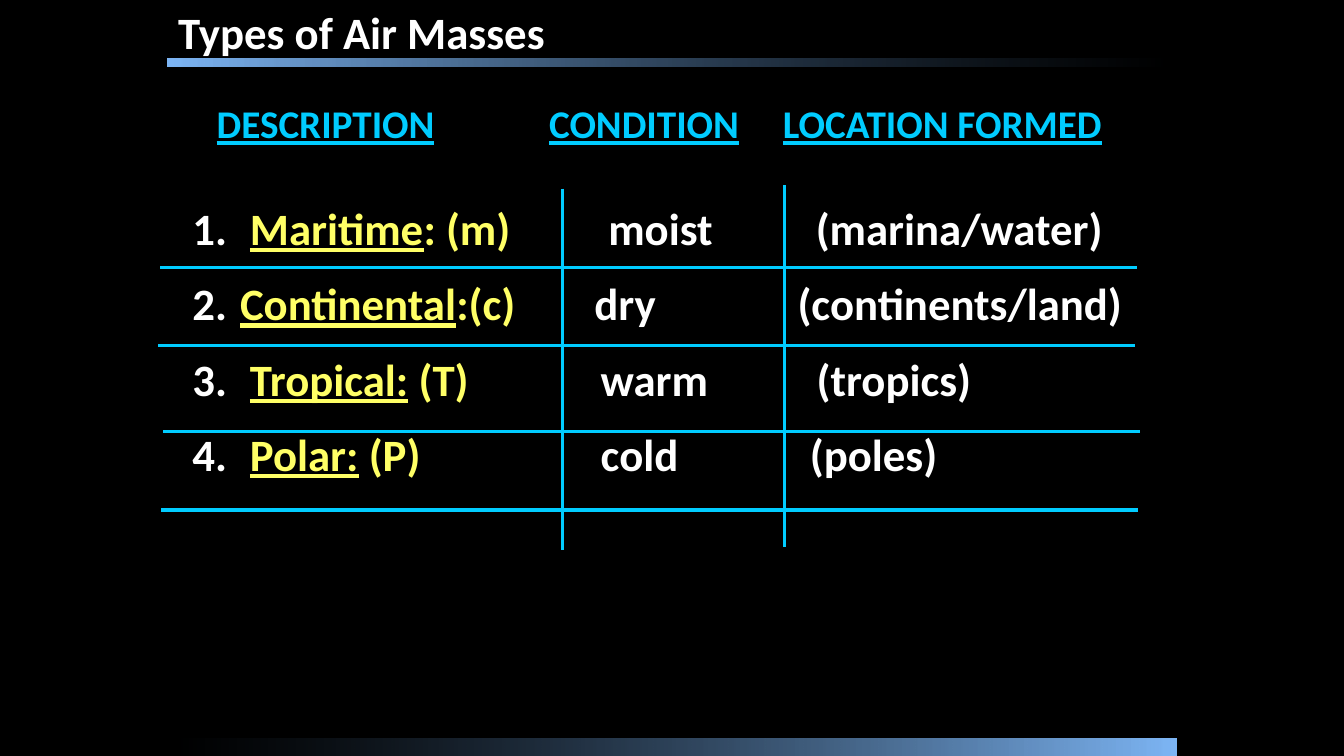
from lxml.etree import SubElement
from pptx import Presentation
from pptx.dml.color import RGBColor
from pptx.enum.shapes import MSO_CONNECTOR, MSO_SHAPE
from pptx.oxml.ns import qn
from pptx.util import Cm, Pt

COLORS = {"background": "000000", "text": "FFFFFF", "name": "FFFF66",
          "accent": "00CCFF", "bar_start": "7EB7F6", "bar_end": "3A5572"}
FONT = "Calibri"
INSET = 0.25

TITLE = "Types of Air Masses"
HEADINGS = ["DESCRIPTION", "CONDITION", "LOCATION FORMED"]
HEADING_TABS = [8.38, 14.27]

# Each cell: indent in cm, then runs of (text, color, underlined)
DESCRIPTIONS = [
    (1.45, [("Maritime", "name", True), (": (m)", "name", False)]),
    (1.2, [("Continental", "name", True), (":(c)", "name", False)]),
    (1.45, [("Tropical:", "name", True), (" (T)", "name", False)]),
    (1.45, [("Polar:", "name", True), (" (P)", "name", False)]),
]
CONDITIONS = [(0.35, "moist"), (0, "dry"), (0.16, "warm"), (0.16, "cold")]
LOCATIONS = [(0.46, "(marina/water)"), (0, "(continents/land)"),
             (0.48, "(tropics)"), (0.31, "(poles)")]

# Left, top, width, height, rotation
BARS = [(4.22, 1.47, 25.4, 0.2, 0), (4.24, 18.62, 25.4, 0.43, 180)]
# Left, top
COLUMN_RULES = [(14.17, 4.75), (19.76, 4.67)]
ROW_RULES = [(4.04, 6.73), (3.99, 8.71), (4.11, 10.87), (4.06, 12.85)]
COLUMN_RULE_LENGTH, ROW_RULE_LENGTH = 9.12, 24.62


def rgb(name):
    return RGBColor.from_string(COLORS[name])


def add_bar(slide, left, top, width, height, rotation):
    """Add a bar that fades from its start color to full transparency."""
    bar = slide.shapes.add_shape(MSO_SHAPE.RECTANGLE, Cm(left), Cm(top), Cm(width), Cm(height))
    bar.shadow.inherit = False
    bar.line.fill.background()
    bar.rotation = rotation
    bar.fill.gradient()
    bar.fill.gradient_angle = 0
    start, end = bar.fill.gradient_stops
    start.color.rgb, end.color.rgb = rgb("bar_start"), rgb("bar_end")
    end_color = bar.fill._xPr.findall(".//" + qn("a:srgbClr"))[-1]
    SubElement(end_color, qn("a:alpha"), val="0")


def add_text_box(slide, left, top, width, height):
    text_frame = slide.shapes.add_textbox(Cm(left), Cm(top), Cm(width), Cm(height)).text_frame
    text_frame.word_wrap = True
    text_frame.margin_left = text_frame.margin_right = Cm(INSET)
    return text_frame


def add_run(paragraph, text, color, size, underlined=False):
    run = paragraph.add_run()
    run.text = text
    run.font.name, run.font.size, run.font.bold = FONT, Pt(size), True
    run.font.underline = underlined
    run.font.color.rgb = rgb(color)


def add_column(slide, left, width, cells, numbered=False):
    """Add one column of indented lines, numbered automatically on request."""
    text_frame = add_text_box(slide, left, 4.93, width, 9.75)
    for index, (indent, runs) in enumerate(cells):
        paragraph = text_frame.add_paragraph() if index else text_frame.paragraphs[0]
        if index:
            paragraph.space_before = Pt(15.5)
        for run in runs:
            add_run(paragraph, *run[:2], 32, run[2])
        properties = paragraph._p.get_or_add_pPr()
        properties.set("marL", str(Cm(indent)))
        if numbered:
            properties.set("indent", str(-Cm(indent)))
            bullet_color = SubElement(properties, qn("a:buClr"))
            SubElement(bullet_color, qn("a:srgbClr"), val=COLORS["text"])
            SubElement(properties, qn("a:buFont"), typeface=FONT)
            SubElement(properties, qn("a:buAutoNum"), type="arabicPeriod")


def add_headings(slide):
    paragraph = add_text_box(slide, 5.21, 2.39, 23.9, 1.45).paragraphs[0]
    tab_list = SubElement(paragraph._p.get_or_add_pPr(), qn("a:tabLst"))
    for position in HEADING_TABS:
        SubElement(tab_list, qn("a:tab"), pos=str(Cm(position)), algn="l")
    for index, heading in enumerate(HEADINGS):
        if index:
            add_run(paragraph, "\t", "accent", 28)
        add_run(paragraph, heading, "accent", 28, True)


def add_rule(slide, left, top, width, height):
    rule = slide.shapes.add_connector(MSO_CONNECTOR.STRAIGHT, Cm(left), Cm(top),
                                      Cm(left + width), Cm(top + height))
    rule.line.color.rgb = rgb("accent")
    rule.line.width = Pt(2.25)
    SubElement(rule._element.spPr, qn("a:effectLst"))


def plain_cells(cells):
    return [(indent, [(text, "text", False)]) for indent, text in cells]


def main():
    presentation = Presentation()
    presentation.slide_width, presentation.slide_height = Cm(33.87), Cm(19.05)
    slide = presentation.slides.add_slide(presentation.slide_layouts[6])
    slide.background.fill.solid()
    slide.background.fill.fore_color.rgb = rgb("background")

    for bar in BARS:
        add_bar(slide, *bar)
    title = add_text_box(slide, 4.24, 0, 16.61, 1.63)
    add_run(title.paragraphs[0], TITLE, "text", 32)
    add_column(slide, 4.6, 9.5, DESCRIPTIONS, numbered=True)
    add_column(slide, 14.98 - INSET, 5, plain_cells(CONDITIONS))
    add_column(slide, 20.1 - INSET, 13.3, plain_cells(LOCATIONS))
    add_headings(slide)
    for left, top in COLUMN_RULES:
        add_rule(slide, left, top, 0, COLUMN_RULE_LENGTH)
    for left, top in ROW_RULES:
        add_rule(slide, left, top, ROW_RULE_LENGTH, 0)
    presentation.save("out.pptx")


if __name__ == "__main__":
    main()
